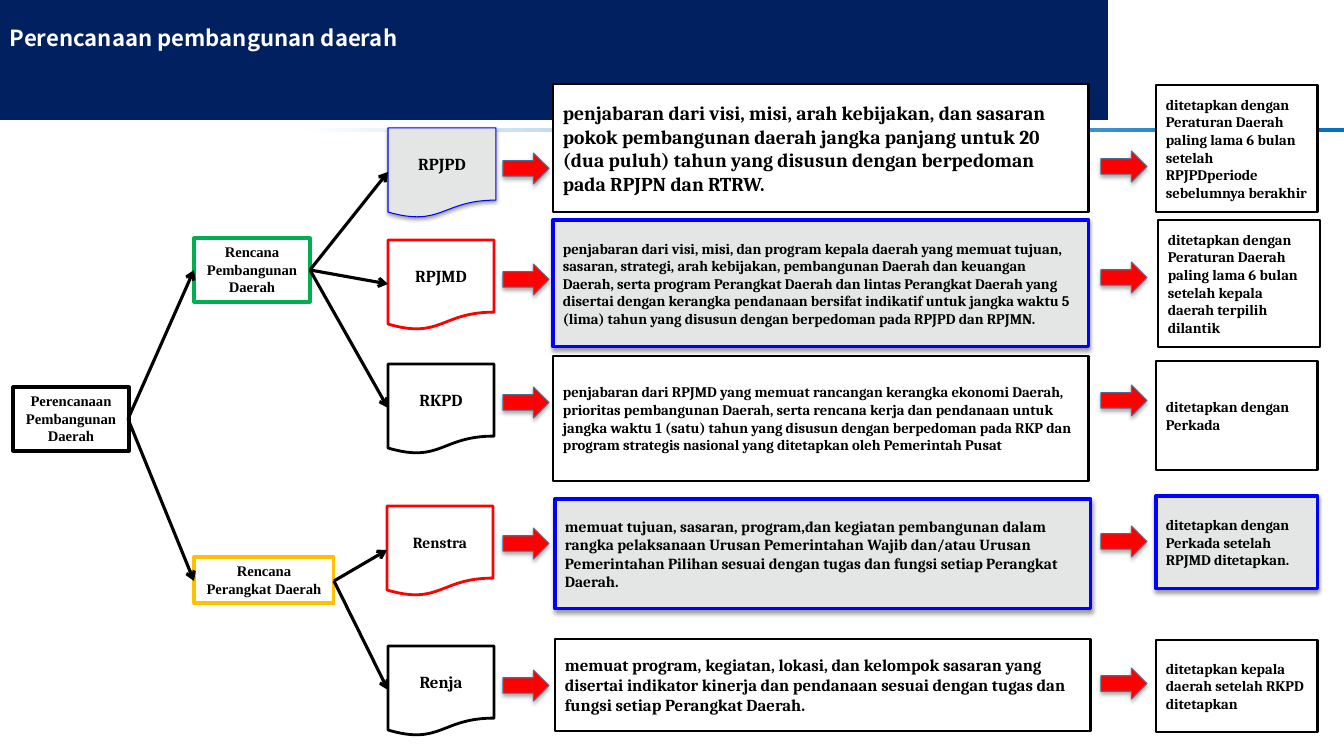
"""Build the slide on regional development planning documents."""
from dataclasses import dataclass

import lxml.etree
import pptx
import pptx.dml.color
import pptx.enum.shapes
import pptx.enum.text
import pptx.oxml
import pptx.oxml.ns
import pptx.util


@dataclass(frozen=True)
class Theme:
    navy: str = "002060"
    sky: str = "0070C0"
    white: str = "FFFFFF"
    black: str = "000000"
    pale: str = "E4E5E5"
    blue: str = "0000FF"
    red: str = "FF0000"
    green: str = "00B050"
    amber: str = "FFC000"
    arrow_edge: str = "4D6B92"
    title_font: str = "Noto Sans CJK SC"
    body_font: str = "Cambria"
    stage_font: str = "Times New Roman"
    title_size: float = 15.8
    large: float = 14
    label: float = 12
    medium: float = 11
    small: float = 10.5


theme = Theme()
PX = pptx.util.Inches(1) / 100.8
PRESET = pptx.enum.shapes.MSO_SHAPE
ALIGN = pptx.enum.text.PP_ALIGN
ANCHOR = pptx.enum.text.MSO_ANCHOR
rgb = pptx.dml.color.RGBColor.from_string


def add_box(preset, frame, fill=None, line=None, width=2, shadow=0):
    box = slide.shapes.add_shape(preset, *(round(n * PX) for n in frame))
    box.shadow.inherit = False
    if fill:
        box.fill.solid()
        box.fill.fore_color.rgb = rgb(fill)
    else:
        box.fill.background()
    if line:
        box.line.color.rgb = rgb(line)
        box.line.width = pptx.util.Pt(width)
    else:
        box.line.fill.background()
    if shadow:
        effects = box._element.spPr.find(pptx.oxml.ns.qn("a:effectLst"))
        effects.append(pptx.oxml.parse_xml(
            f'<a:outerShdw {pptx.oxml.ns.nsdecls("a")} blurRad="39370" dist="20320" dir="5400000" rotWithShape="0">'
            f'<a:srgbClr val="{theme.black}"><a:alpha val="{shadow * 1000}"/></a:srgbClr></a:outerShdw>'))
    return box


def write(box, text, size, font=theme.body_font, color=theme.black,
          align=ALIGN.LEFT, anchor=ANCHOR.MIDDLE, wrap=True):
    frame = box.text_frame
    frame.word_wrap = wrap
    frame.vertical_anchor = anchor
    frame.text = text
    for paragraph in frame.paragraphs:
        paragraph.alignment = align
        paragraph.font.name = font
        paragraph.font.size = pptx.util.Pt(size)
        paragraph.font.bold = True
        paragraph.font.color.rgb = rgb(color)


presentation = pptx.Presentation()
presentation.slide_width = round(1344 * PX)
presentation.slide_height = round(756 * PX)
slide = presentation.slides.add_slide(presentation.slide_layouts[6])

stripe = add_box(PRESET.FLOWCHART_PROCESS, (0, 128, 1344, 4))
stripe.fill.gradient()
stripe.fill.gradient_angle = 180
for stop, color, position in zip(stripe.fill.gradient_stops, (theme.sky, theme.white), (0, 0.78)):
    stop.color.rgb = rgb(color)
    stop.position = position

add_box(PRESET.RECTANGLE, (0, 0, 1108, 120), theme.navy)
title = slide.shapes.add_textbox(0, 0, round(1300 * PX), round(76 * PX))
write(title, "Perencanaan pembangunan daerah", theme.title_size, theme.title_font, theme.white)

plain = (theme.white, theme.black, 2)
red_edge = (theme.white, theme.red, 2)
shaded = (theme.pale, theme.blue, 2.25, 38)
plans = [
    ("RPJPD", theme.label, (388, 128, 108, 90), (theme.pale, theme.blue, 0.75, 38),
     "penjabaran dari visi, misi, arah kebijakan, dan sasaran pokok pembangunan daerah jangka panjang "
     "untuk 20 (dua puluh) tahun yang disusun dengan berpedoman pada RPJPN dan RTRW.",
     theme.large, (553, 84, 536, 128), plain,
     "ditetapkan dengan Peraturan Daerah paling lama 6 bulan setelah RPJPDperiode sebelumnya berakhir",
     (1156, 85, 162, 127), plain, 153),
    ("RPJMD", theme.label, (388, 240, 106, 90), red_edge,
     "penjabaran dari visi, misi, dan program kepala daerah yang memuat tujuan, sasaran, strategi, "
     "arah kebijakan, pembangunan Daerah dan keuangan Daerah, serta program Perangkat Daerah dan lintas "
     "Perangkat Daerah yang disertai dengan kerangka pendanaan bersifat indikatif untuk jangka waktu "
     "5 (lima) tahun yang disusun dengan berpedoman pada RPJPD dan RPJMN.",
     theme.small, (553, 220, 536, 127), shaded,
     "ditetapkan dengan Peraturan Daerah paling lama 6 bulan setelah kepala daerah terpilih dilantik",
     (1158, 220, 162, 127), plain, 264),
    ("RKPD", theme.label, (388, 364, 106, 90), plain,
     "penjabaran dari RPJMD yang memuat rancangan kerangka ekonomi Daerah, prioritas pembangunan Daerah, "
     "serta rencana kerja dan pendanaan untuk jangka waktu 1 (satu) tahun yang disusun dengan berpedoman "
     "pada RKP dan program strategis nasional yang ditetapkan oleh Pemerintah Pusat",
     theme.small, (553, 356, 536, 125), plain,
     "ditetapkan dengan Perkada", (1156, 361, 162, 109), plain, 387),
    ("Renstra", theme.medium, (387, 506, 106, 90), red_edge,
     "memuat tujuan, sasaran, program,dan kegiatan pembangunan dalam rangka pelaksanaan Urusan "
     "Pemerintahan Wajib dan/atau Urusan Pemerintahan Pilihan sesuai dengan tugas dan fungsi setiap "
     "Perangkat Daerah.",
     theme.medium, (555, 499, 536, 110), shaded,
     "ditetapkan dengan\nPerkada setelah RPJMD ditetapkan.", (1156, 496, 162, 93), shaded, 528),
    ("Renja", theme.label, (388, 646, 106, 90), plain,
     "memuat program, kegiatan, lokasi, dan kelompok sasaran yang disertai indikator kinerja dan "
     "pendanaan sesuai dengan tugas dan fungsi setiap Perangkat Daerah.",
     theme.label, (555, 639, 536, 92), plain,
     "ditetapkan kepala daerah setelah RKPD ditetapkan", (1156, 640, 162, 92), plain, 670),
]
for (plan, plan_size, plan_frame, plan_style, content, content_size, content_frame, content_style,
     decree, decree_frame, decree_style, arrow_top) in plans:
    write(add_box(PRESET.FLOWCHART_DOCUMENT, plan_frame, *plan_style), plan, plan_size, align=ALIGN.CENTER)
    write(add_box(PRESET.RECTANGLE, content_frame, *content_style), content, content_size)
    write(add_box(PRESET.RECTANGLE, decree_frame, *decree_style), decree, theme.small)
    for left, top in ((503, arrow_top), (1101, arrow_top - 2)):
        add_box(PRESET.RIGHT_ARROW, (left, top, 46, 31), theme.red, theme.arrow_edge, 0.75, 35)

stages = [
    ("Perencanaan\nPembangunan\nDaerah", (13, 387, 116, 64), theme.black),
    ("Rencana\nPembangunan\nDaerah", (194, 238, 116, 64), theme.green),
    ("Rencana\nPerangkat Daerah", (194, 557, 140, 46), theme.amber),
]
for stage, frame, edge in stages:
    write(add_box(PRESET.RECTANGLE, frame, None, edge, 2.25), stage, theme.small, theme.stage_font,
          align=ALIGN.CENTER, anchor=ANCHOR.TOP, wrap=False)

branches = [
    ((128, 419), [(194, 270), (194, 581)]),
    ((310, 270), [(388, 172), (388, 284), (388, 408)]),
    ((334, 581), [(387, 550), (388, 690)]),
]
for start, ends in branches:
    for end in ends:
        branch = slide.shapes.add_connector(pptx.enum.shapes.MSO_CONNECTOR.STRAIGHT,
                                            *(round(n * PX) for n in start + end))
        branch.line.color.rgb = rgb(theme.black)
        branch.line.width = pptx.util.Pt(2.25)
        lxml.etree.SubElement(branch.line._get_or_add_ln(), pptx.oxml.ns.qn("a:tailEnd"), type="arrow")
        lxml.etree.SubElement(branch._element.spPr, pptx.oxml.ns.qn("a:effectLst"))

presentation.save("out.pptx")
